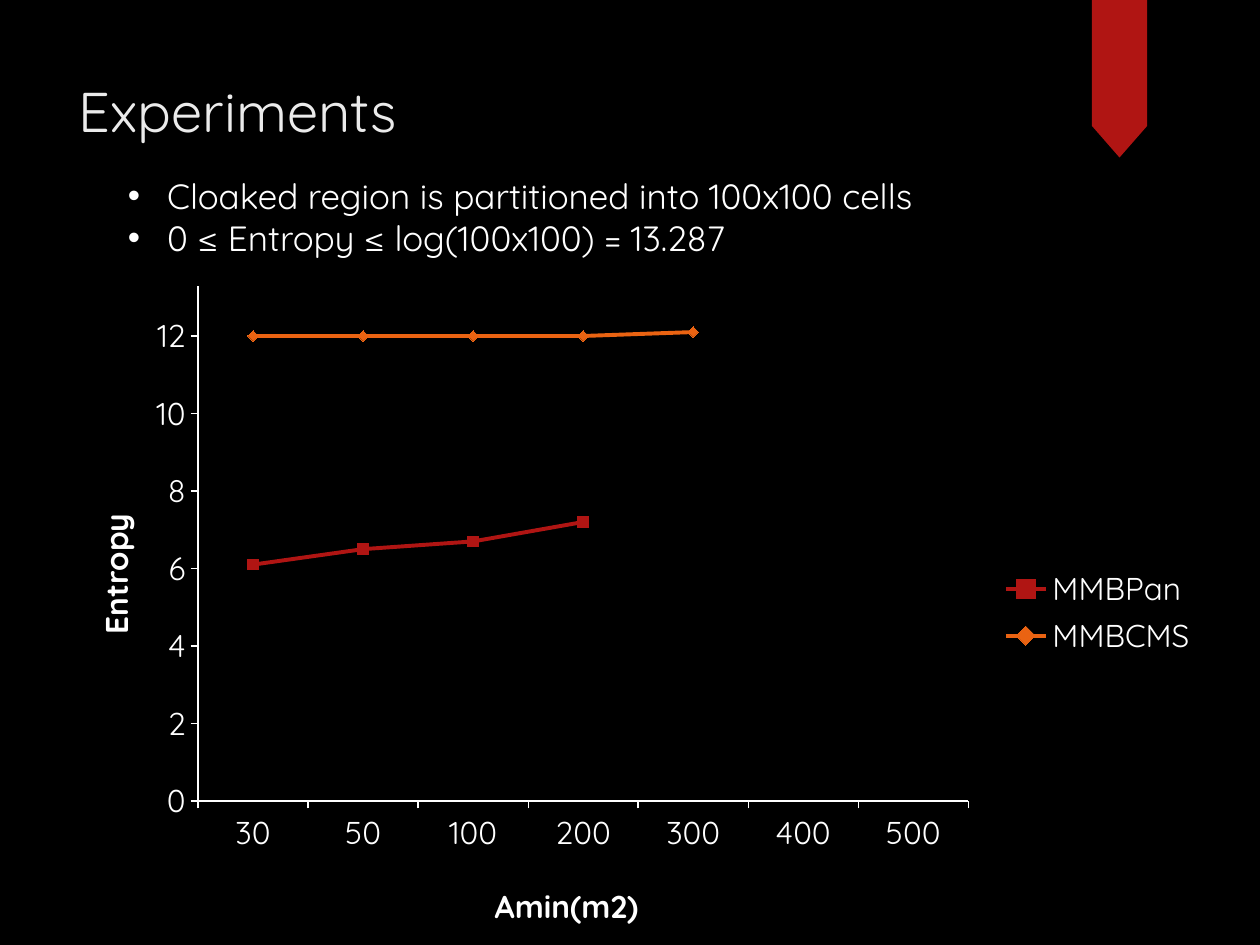
from lxml import etree
from pptx import Presentation
from pptx.chart.data import CategoryChartData
from pptx.dml.color import RGBColor
from pptx.enum.chart import XL_CHART_TYPE, XL_LEGEND_POSITION, XL_MARKER_STYLE, XL_TICK_MARK
from pptx.enum.shapes import MSO_SHAPE
from pptx.enum.text import MSO_ANCHOR, MSO_AUTO_SIZE
from pptx.oxml.ns import qn
from pptx.util import Pt

LINE_MARKERS = XL_CHART_TYPE.LINE_MARKERS
LEGEND_RIGHT = XL_LEGEND_POSITION.RIGHT
SQUARE, DIAMOND = XL_MARKER_STYLE.SQUARE, XL_MARKER_STYLE.DIAMOND
TICK_OUT, TICK_NONE = XL_TICK_MARK.OUTSIDE, XL_TICK_MARK.NONE
RIBBON = MSO_SHAPE.FLOWCHART_OFFPAGE_CONNECTOR
MIDDLE, TOP = MSO_ANCHOR.MIDDLE, MSO_ANCHOR.TOP
FIT_SHAPE, FIT_NONE = MSO_AUTO_SIZE.SHAPE_TO_FIT_TEXT, MSO_AUTO_SIZE.NONE

BLACK, WHITE, PALE = "000000", "FFFFFF", "EBEBEB"
RED, ORANGE = "B01513", "EA6312"


def color(value):
    return RGBColor.from_string(value)


def apply(target, formats):
    for name, value in formats.items():
        setattr(target, name, value)


def place(element, **fractions):
    layout = element.find(qn("c:layout"))
    if layout is None:
        layout = etree.Element(qn("c:layout"))
        overlay = element.find(qn("c:overlay"))
        element.insert(0 if overlay is None else element.index(overlay), layout)
    manual = etree.SubElement(layout, qn("c:manualLayout"))
    settings = {"xMode": "edge", "yMode": "edge", **fractions}
    if element.tag == qn("c:plotArea"):
        settings = {"layoutTarget": "inner", **settings}
    for name, value in settings.items():
        etree.SubElement(manual, qn(f"c:{name}")).set("val", str(value))


class SlideBuilder:
    font_name = "Quicksand"

    def __init__(self, slide):
        self.slide = slide

    def style(self, font, size, hex_color, bold=False):
        apply(font, {"name": self.font_name, "size": Pt(size), "bold": bold})
        font.color.rgb = color(hex_color)

    def background(self, hex_color):
        fill = self.slide.background.fill
        fill.solid()
        fill.fore_color.rgb = color(hex_color)

    def ribbon(self, box, hex_color):
        marker = self.slide.shapes.add_shape(RIBBON, *map(Pt, box))
        marker.shadow.inherit = False
        marker.fill.solid()
        marker.fill.fore_color.rgb = color(hex_color)
        marker.line.fill.background()

    def text(self, box, lines, size, hex_color, indent=0, **frame_formats):
        frame = self.slide.shapes.add_textbox(*map(Pt, box)).text_frame
        apply(frame, frame_formats)
        frame.text = "\n".join(lines)
        for paragraph in frame.paragraphs:
            if indent:
                properties = paragraph._p.get_or_add_pPr()
                properties.set("marL", str(Pt(indent)))
                properties.set("indent", str(-Pt(indent)))
                etree.SubElement(properties, qn("a:buFont")).set("typeface", "Arial")
                etree.SubElement(properties, qn("a:buChar")).set("char", "•")
            self.style(paragraph.font, size, hex_color)

    def axis(self, axis, title, position, rotation, formats):
        apply(axis, {"has_major_gridlines": False, "major_tick_mark": TICK_OUT,
                     "minor_tick_mark": TICK_NONE, **formats})
        apply(axis.tick_labels, {"number_format": "General", "number_format_is_linked": False})
        self.style(axis.tick_labels.font, 18, WHITE)
        axis.format.line.width = Pt(0.75)
        axis.format.line.color.rgb = color(WHITE)
        frame = axis.axis_title.text_frame
        frame.text = title
        frame._txBody.bodyPr.set("rot", str(rotation * 60000))
        frame._txBody.bodyPr.set("vert", "horz")
        self.style(frame.paragraphs[0].runs[0].font, 18, WHITE, bold=True)
        place(axis.axis_title._element, **position)

    def line_chart(self, box, categories, series):
        data = CategoryChartData()
        data.categories = categories
        for name, values, _, _ in series:
            data.add_series(name, values)
        chart = self.slide.shapes.add_chart(LINE_MARKERS, *map(Pt, box), data).chart
        apply(chart, {"has_title": False, "has_legend": True})
        self.style(chart.font, 18, WHITE)
        apply(chart.legend, {"position": LEGEND_RIGHT, "include_in_layout": False})
        self.style(chart.legend.font, 18, WHITE)
        place(chart.legend._element, x=0.82, y=0.43, w=0.17, h=0.15)
        place(chart._chartSpace.chart.plotArea, x=0.126, y=0.02, w=0.667, h=0.766)
        chart.plots[0].vary_by_categories = False
        for line, (_, _, hex_color, symbol) in zip(chart.plots[0].series, series):
            line.smooth = False
            line.format.line.width = Pt(2.25)
            line.format.line.color.rgb = color(hex_color)
            apply(line.marker, {"style": symbol, "size": 6})
            line.marker.format.fill.solid()
            line.marker.format.fill.fore_color.rgb = color(hex_color)
            line.marker.format.line.color.rgb = color(hex_color)
        return chart


def main():
    deck = Presentation()
    apply(deck, {"slide_width": Pt(720), "slide_height": Pt(540)})
    builder = SlideBuilder(deck.slides.add_slide(deck.slide_layouts[6]))
    builder.background(BLACK)
    builder.ribbon((624, 0, 31.5, 90), RED)
    builder.text((38, 36, 586, 54), ["Experiments"], 32, PALE,
                 word_wrap=True, auto_size=FIT_NONE, vertical_anchor=MIDDLE)
    entropy_chart = builder.line_chart(
        (30, 156, 660, 384),
        ["30", "50", "100", "200", "300", "400", "500"],
        [("MMBPan", [6.1, 6.5, 6.7, 7.2, None, None, None], RED, SQUARE),
         ("MMBCMS", [12, 12, 12, 12, 12.1, None, None], ORANGE, DIAMOND)])
    builder.axis(entropy_chart.category_axis, "Amin(m2)", {"x": 0.378, "y": 0.9}, 0, {})
    builder.axis(entropy_chart.value_axis, "Entropy", {"x": 0.03, "y": 0.35}, -90,
                 {"minimum_scale": 0, "maximum_scale": 13.28, "major_unit": 2})
    builder.text((66, 96, 493, 55.5),
                 ["Cloaked region is partitioned into 100x100 cells",
                  "0 ≤ Entropy ≤ log(100x100) = 13.287"],
                 20, WHITE, indent=22.5,
                 word_wrap=False, auto_size=FIT_SHAPE, vertical_anchor=TOP)
    deck.save("out.pptx")


if __name__ == "__main__":
    main()
